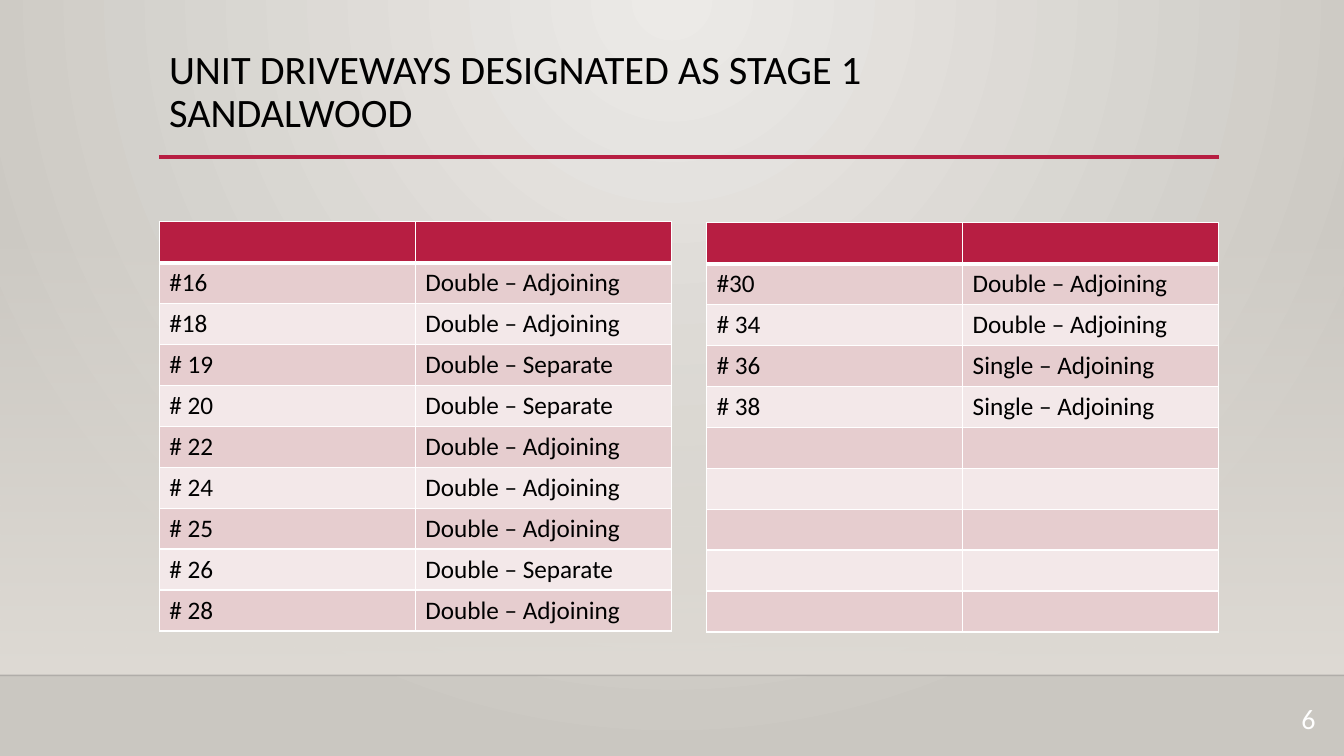
from lxml.etree import SubElement
from pptx import Presentation
from pptx.dml.color import RGBColor
from pptx.enum.shapes import MSO_CONNECTOR, MSO_SHAPE
from pptx.enum.text import MSO_ANCHOR, PP_ALIGN
from pptx.oxml.ns import qn
from pptx.util import Pt

FONT = "Calibri"
CRIMSON = "B71E42"
BANDS = ["E6CDCF", "F3E8E9"]
WIDTH, HEIGHT = 960, 540
LEFT, RIGHT = 113.75, 870.5
FLOOR = 482.4
ROW_COUNT, ROW_HEIGHT, COLUMN_WIDTH = 10, 29.25, 182.9

FIRST_UNITS = [
    ("#16", "Double – Adjoining"),
    ("#18", "Double – Adjoining"),
    ("# 19", "Double – Separate"),
    ("# 20", "Double – Separate"),
    ("# 22", "Double – Adjoining"),
    ("# 24", "Double – Adjoining"),
    ("# 25", "Double – Adjoining"),
    ("# 26", "Double – Separate"),
    ("# 28", "Double – Adjoining"),
]
SECOND_UNITS = [
    ("#30", "Double – Adjoining"),
    ("# 34", "Double – Adjoining"),
    ("# 36", "Single – Adjoining"),
    ("# 38", "Single – Adjoining"),
]


def color(value):
    return RGBColor.from_string(value)


def write(frame, text, size=18, ink="000000", align=PP_ALIGN.LEFT, spacing=None):
    para = frame.paragraphs[0]
    para.alignment = align
    if spacing:
        para.line_spacing = spacing
    for index, line in enumerate(text.splitlines()):
        if index:
            para.add_line_break()
        span = para.add_run()
        span.text = line
        span.font.name = FONT
        span.font.size = Pt(size)
        span.font.color.rgb = color(ink)


def set_alpha(parent, percent):
    tone = next(parent.iter(qn("a:srgbClr")))
    SubElement(tone, qn("a:alpha"), val=str(percent * 1000))


def set_gradient(fill, start, end):
    fill.gradient()
    for stop, value in zip(fill.gradient_stops, (start, end)):
        stop.color.rgb = color(value)


def add_background(slide):
    fill = slide.background.fill
    set_gradient(fill, "ECEAE7", "CAC7C1")
    linear = next(slide.element.iter(qn("a:lin")))
    gradient = linear.getparent()
    gradient.remove(linear)
    circle = SubElement(gradient, qn("a:path"), path="circle")
    SubElement(circle, qn("a:fillToRect"), l="43000", t="0", r="43000", b="100000")


def add_wall(slide):
    top = 159.1
    wall = slide.shapes.add_shape(
        MSO_SHAPE.RECTANGLE, Pt(0), Pt(top), Pt(WIDTH), Pt(FLOOR - top))
    wall.shadow.inherit = False
    wall.line.fill.background()
    set_gradient(wall.fill, "DFDBD5", "DFDBD5")
    wall.fill.gradient_angle = 270
    set_alpha(next(wall.element.iter(qn("a:gs"))), 0)


def add_rule(slide, left, right, y, ink, weight, opacity=100):
    rule = slide.shapes.add_connector(
        MSO_CONNECTOR.STRAIGHT, Pt(left), Pt(y), Pt(right), Pt(y))
    rule.line.color.rgb = color(ink)
    rule.line.width = Pt(weight)
    if opacity < 100:
        set_alpha(rule.element.spPr, opacity)
    SubElement(rule.element.spPr, qn("a:effectLst"))


def add_text(slide, left, top, width, height, text, anchor, **style):
    box = slide.shapes.add_textbox(Pt(left), Pt(top), Pt(width), Pt(height))
    frame = box.text_frame
    frame.word_wrap = True
    frame.vertical_anchor = anchor
    write(frame, text, **style)


def add_borders(cell, bottom):
    properties = cell._tc.get_or_add_tcPr()
    weights = {"lnL": 1, "lnR": 1, "lnT": 1, "lnB": bottom}
    for index, (side, weight) in enumerate(weights.items()):
        edge = properties.makeelement(qn("a:" + side), {"w": str(Pt(weight))})
        properties.insert(index, edge)
        solid = SubElement(edge, qn("a:solidFill"))
        SubElement(solid, qn("a:srgbClr"), val="FFFFFF")


def add_unit_table(slide, left, top, units):
    table = slide.shapes.add_table(
        ROW_COUNT, 2, Pt(left), Pt(top),
        Pt(2 * COLUMN_WIDTH), Pt(ROW_COUNT * ROW_HEIGHT)).table
    for column in table.columns:
        column.width = Pt(COLUMN_WIDTH)
    for index, row in enumerate(table.rows):
        row.height = Pt(ROW_HEIGHT)
        for cell in row.cells:
            cell.fill.solid()
            cell.fill.fore_color.rgb = color(BANDS[(index - 1) % 2] if index else CRIMSON)
            add_borders(cell, 1 if index else 3)
    for index, unit in enumerate(units, 1):
        for cell, text in zip(table.rows[index].cells, unit):
            write(cell.text_frame, text)


def main():
    deck = Presentation()
    deck.slide_width, deck.slide_height = Pt(WIDTH), Pt(HEIGHT)
    page = deck.slides.add_slide(deck.slide_layouts[6])
    add_background(page)
    add_wall(page)
    add_rule(page, 0, WIDTH, FLOOR, "000001", 1, opacity=20)
    add_rule(page, LEFT, RIGHT, 112.3, CRIMSON, 2.5)
    add_text(page, LEFT, 31.7, 756, 57.6,
             "UNIT DRIVEWAYS DESIGNATED AS STAGE 1\nSANDALWOOD",
             MSO_ANCHOR.TOP, size=28.8, spacing=0.9)
    add_unit_table(page, LEFT, 158.4, FIRST_UNITS)
    add_unit_table(page, RIGHT - 2 * COLUMN_WIDTH, 159.1, SECOND_UNITS)
    add_text(page, 892.8, 495.4, 54, 36, "6", MSO_ANCHOR.MIDDLE,
             size=20, ink="FFFFFF", align=PP_ALIGN.RIGHT)
    deck.save("out.pptx")


if __name__ == "__main__":
    main()
